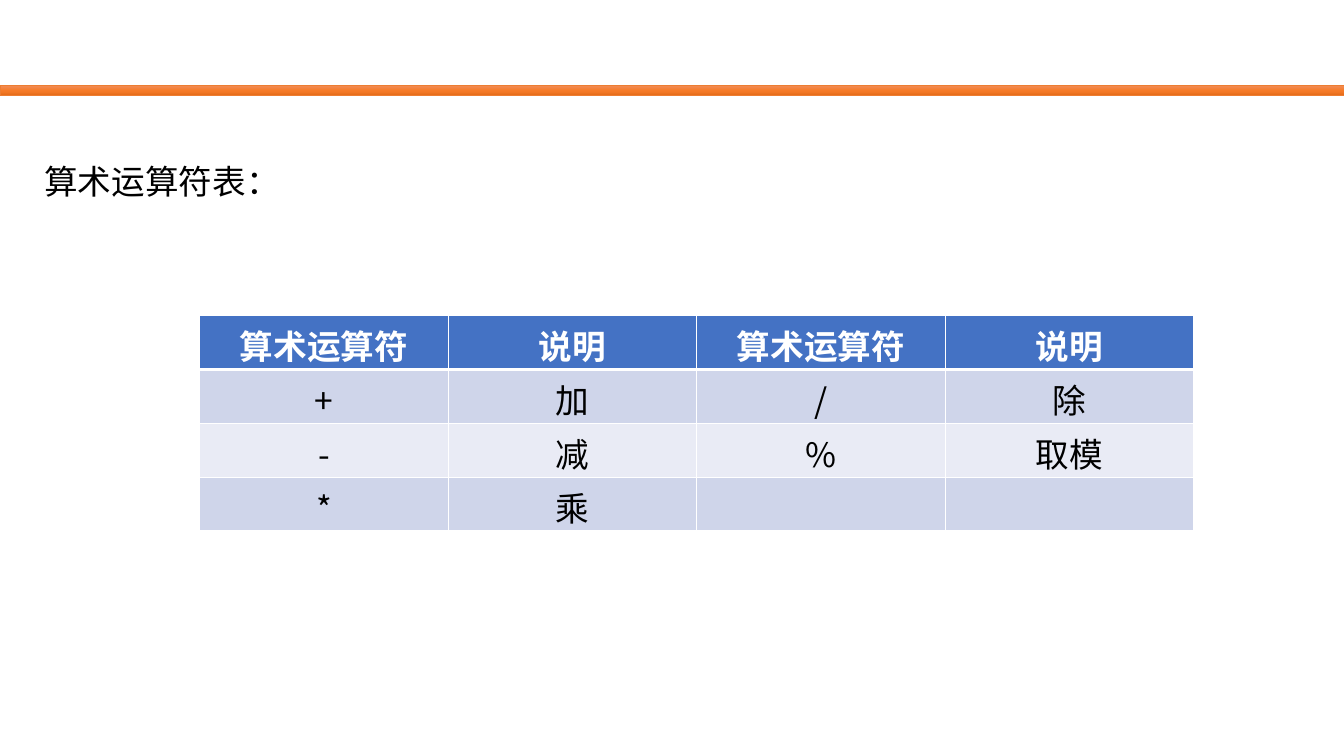
from copy import deepcopy
from dataclasses import dataclass

from lxml import etree
from pptx import Presentation
from pptx.dml.color import RGBColor
from pptx.enum import shapes, text
from pptx.oxml import ns
from pptx.util import Inches, Pt


@dataclass
class Theme:
    face: str = "Noto Sans CJK SC"
    size: int = 24
    ink: str = "000000"
    white: str = "FFFFFF"
    head: str = "4472C4"
    bands: tuple = ("CFD5EA", "E9EBF5")
    bar: tuple = ("F18C57", "F67B28", "E56C19")
    edge: str = "ED7D31"


theme = Theme()


def style(para, color, bold=False):
    """Set the type of every run, for Latin and Chinese characters."""
    for run in para.runs:
        font = run.font
        font.name, font.size, font.bold = theme.face, Pt(theme.size), bold
        font.color.rgb = RGBColor.from_string(color)
        ea = etree.SubElement(run._r.get_or_add_rPr(), ns.qn("a:ea"))
        ea.set("typeface", theme.face)


def border(cell, side, width):
    """Draw one white edge of a cell."""
    line = etree.SubElement(cell._tc.get_or_add_tcPr(), ns.qn("a:ln" + side))
    line.set("w", str(Pt(width)))
    fill = etree.SubElement(line, ns.qn("a:solidFill"))
    etree.SubElement(fill, ns.qn("a:srgbClr")).set("val", theme.white)


deck = Presentation()
deck.slide_width, deck.slide_height = Inches(13.33), Inches(7.5)
slide = deck.slides.add_slide(deck.slide_layouts[5])

# Orange bar across the top
bar = slide.shapes.add_shape(
    shapes.MSO_SHAPE.RECTANGLE, 0, Inches(0.85), deck.slide_width, Inches(0.1))
bar.shadow.inherit = False
bar.line.color.rgb = RGBColor.from_string(theme.edge)
bar.line.width = Pt(0.5)
bar.fill.gradient()
bar.fill.gradient_angle = 270
first = bar._element.spPr.find(".//" + ns.qn("a:gs"))
first.addnext(deepcopy(first))
for i, (stop, color) in enumerate(zip(bar.fill.gradient_stops, theme.bar)):
    stop.position = i / 2
    stop.color.rgb = RGBColor.from_string(color)

# Heading
title = slide.shapes.title
title.left, title.top = Inches(0.34), Inches(1.55)
title.width, title.height = Inches(3.8), Inches(0.5)
frame = title.text_frame
frame.text = "算术运算符表："
frame.word_wrap = True
frame.auto_size = text.MSO_AUTO_SIZE.SHAPE_TO_FIT_TEXT
frame.vertical_anchor = text.MSO_ANCHOR.TOP
frame.paragraphs[0].alignment = text.PP_ALIGN.LEFT
style(frame.paragraphs[0], theme.ink)

# Table of operators
rows = [
    ("算术运算符", "说明", "算术运算符", "说明"),
    ("+", "加", "/", "除"),
    ("-", "减", "%", "取模"),
    ("*", "乘", "", ""),
]
table = slide.shapes.add_table(
    len(rows), len(rows[0]), Inches(1.98), Inches(3.13),
    Inches(9.86), Inches(2.14)).table
for r, row in enumerate(rows):
    top = r == 0
    shade = theme.head if top else theme.bands[(r - 1) % 2]
    for c, word in enumerate(row):
        cell = table.cell(r, c)
        for side in "LRTB":
            thick = (r, side) in ((0, "B"), (1, "T"))
            border(cell, side, 3 if thick else 1)
        cell.fill.solid()
        cell.fill.fore_color.rgb = RGBColor.from_string(shade)
        cell.text_frame.text = word
        para = cell.text_frame.paragraphs[0]
        para.alignment = text.PP_ALIGN.CENTER
        style(para, theme.white if top else theme.ink, top)

deck.save("out.pptx")
